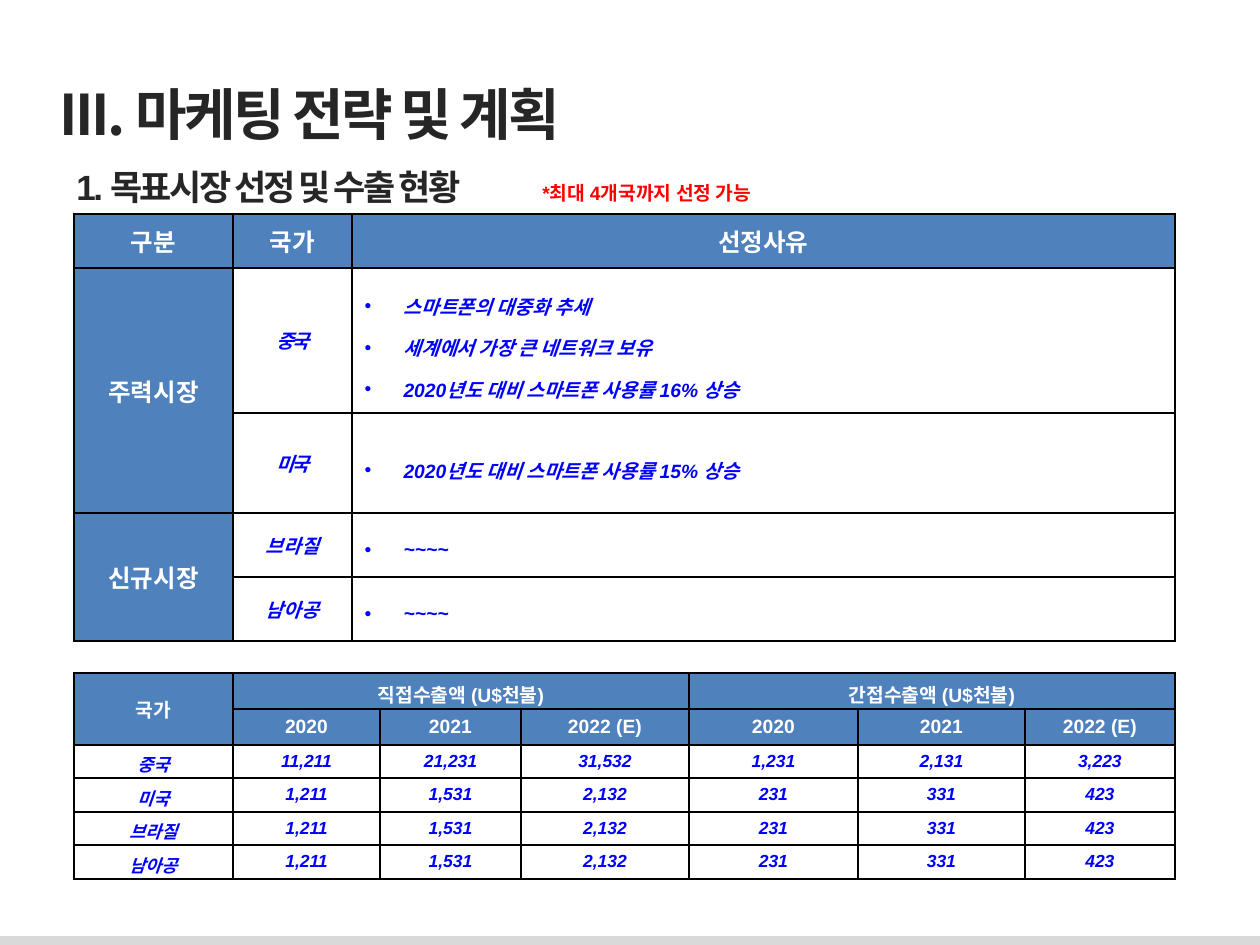
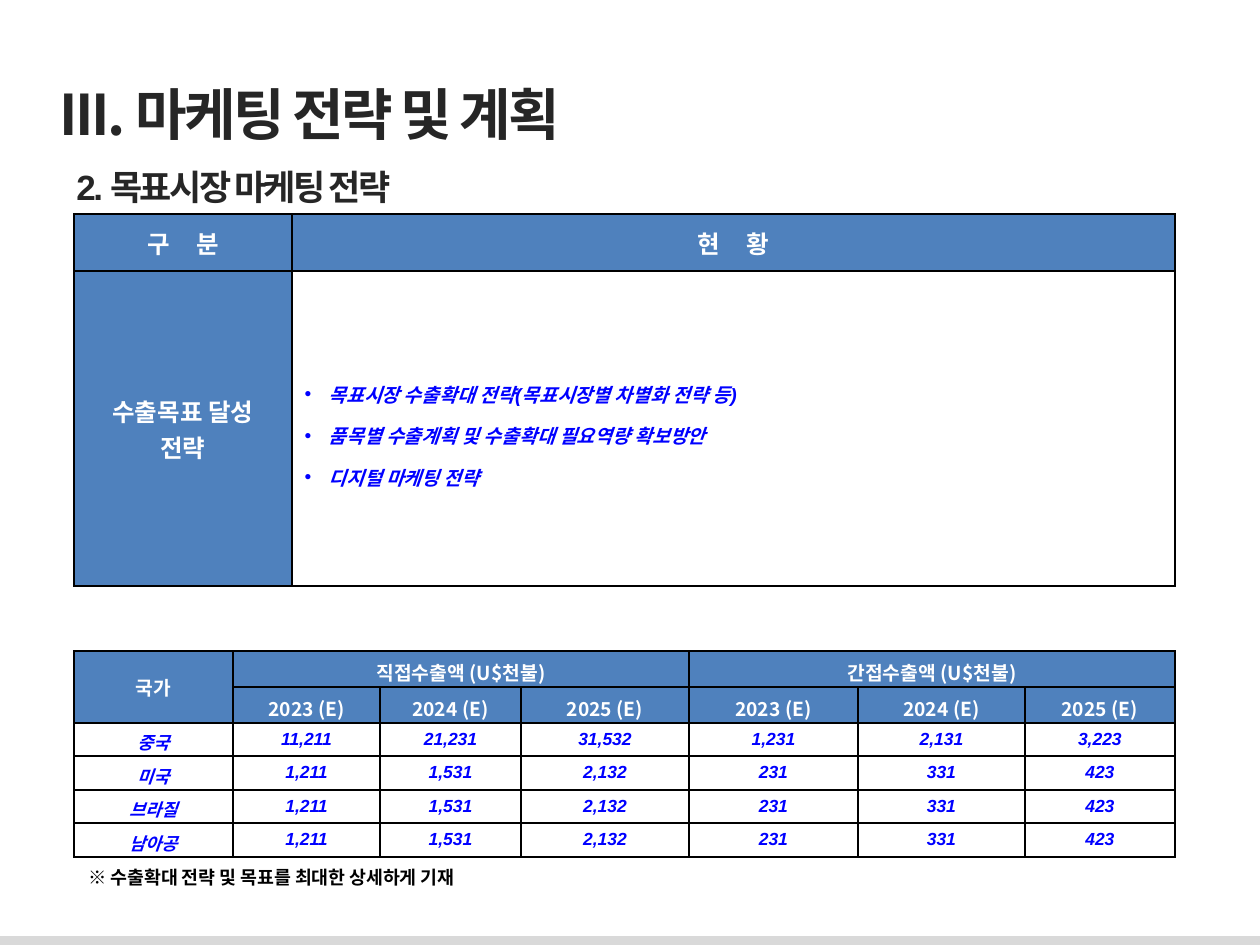
from dataclasses import dataclass, replace

import pptx
import pptx.dml.color
import pptx.enum.shapes
import pptx.enum.text
import pptx.oxml
import pptx.oxml.ns
import pptx.util
from lxml import etree

EMU_PER_PX = 914400 / 126
SLIDE_W, SLIDE_H = 1260, 945
TABLE_X = 74
ARIAL, NOTO = "Arial", "Noto Sans CJK KR"
WHITE, BLACK, DARK = "FFFFFF", "000000", "262626"
BLUE, RED, HEADER_FILL, BAND = "0000FF", "FF0000", "4F81BD", "D9D9D9"
CENTER = pptx.enum.text.PP_ALIGN.CENTER
LEFT = pptx.enum.text.PP_ALIGN.LEFT
MIDDLE = pptx.enum.text.MSO_ANCHOR.MIDDLE
qn = pptx.oxml.ns.qn


@dataclass(frozen=True)
class Style:
    size: float
    color: str
    latin: str = ARIAL
    bold: bool = True
    italic: bool = False
    spacing: float = 0


@dataclass(frozen=True)
class Box:
    x: int
    y: int
    w: int
    h: int


@dataclass(frozen=True)
class Cell:
    text: str
    style: Style
    fill: str | None = None
    rows: int = 1
    cols: int = 1
    indent: int = 0
    bottom: int = 6


TITLE = Style(32, DARK, NOTO, spacing=-1.5)
SUBTITLE = Style(20, DARK, spacing=-1.5)
WARNING = Style(11, RED)
FOOTNOTE = Style(10.5, BLACK, NOTO)
HEADER = Style(14, WHITE)
WIDE_HEADER = replace(HEADER, spacing=6)
SMALL_HEADER = Style(11, WHITE)
ENTRY = Style(11, BLUE, italic=True)
TIGHT_ENTRY = replace(ENTRY, spacing=-1.5)
FIGURE = Style(10, BLUE, italic=True)

TITLE_BOX = Box(47, 73, 582, 81)
SUBTITLE_BOX = Box(64, 159, 635, 55)
WARNING_BOX = Box(530, 174, 535, 37)
FOOTNOTE_BOX = Box(76, 852, 1099, 40)
EXPORT_COLS = [159, 147, 141, 168, 169, 167, 150]
EXPORT_ROWS = [36, 36, 33, 34, 33, 34]
EXPORT_FIGURES = {
    "중국": ["11,211", "21,231", "31,532", "1,231", "2,131", "3,223"],
    **{country: ["1,211", "1,531", "2,132", "231", "331", "423"]
       for country in ("미국", "브라질", "남아공")},
}


def px(n: float) -> pptx.util.Emu:
    return pptx.util.Emu(round(n * EMU_PER_PX))


def rgb(color: str) -> pptx.dml.color.RGBColor:
    return pptx.dml.color.RGBColor.from_string(color)


def place(sp, box: Box) -> None:
    sp.left, sp.top, sp.width, sp.height = map(px, (box.x, box.y, box.w, box.h))


def style_run(r, style: Style) -> None:
    r.font.size = pptx.util.Pt(style.size)
    r.font.bold, r.font.italic = style.bold, style.italic
    r.font.color.rgb = rgb(style.color)
    r.font.name = style.latin
    rpr = r._r.get_or_add_rPr()
    etree.SubElement(rpr, qn("a:ea")).set("typeface", NOTO)
    if style.spacing:
        rpr.set("spc", str(round(style.spacing * 100)))


def write(tf, text: str, style: Style, align=LEFT) -> None:
    tf.text = text
    for p in tf.paragraphs:
        p.alignment = align
        for r in p.runs:
            style_run(r, style)


def add_bullets(tf, indent: int) -> None:
    for p in tf.paragraphs:
        ppr = p._p.get_or_add_pPr()
        ppr.set("marL", str(px(indent)))
        ppr.set("indent", str(-px(indent)))
        etree.SubElement(ppr, qn("a:buFont")).set("typeface", ARIAL)
        etree.SubElement(ppr, qn("a:buChar")).set("char", "•")
        p.line_spacing = 1.5


def add_text(s, box: Box, text: str, style: Style):
    sp = s.shapes.add_textbox(0, 0, 0, 0)
    place(sp, box)
    tf = sp.text_frame
    tf.word_wrap = True
    tf.vertical_anchor = MIDDLE
    write(tf, text, style)
    return tf


def add_borders(cell) -> None:
    tcpr = cell._tc.get_or_add_tcPr()
    for side in ("lnL", "lnR", "lnT", "lnB"):
        ln = etree.SubElement(tcpr, qn(f"a:{side}"), w=str(pptx.util.Pt(1)))
        fill = etree.SubElement(ln, qn("a:solidFill"))
        etree.SubElement(fill, qn("a:srgbClr")).set("val", BLACK)


def fill_cell(cell, item: Cell) -> None:
    cell.vertical_anchor = MIDDLE
    cell.margin_top, cell.margin_bottom = px(6), px(item.bottom)
    write(cell.text_frame, item.text, item.style, LEFT if item.indent else CENTER)
    if item.indent:
        add_bullets(cell.text_frame, item.indent)
    if item.fill:
        cell.fill.solid()
        cell.fill.fore_color.rgb = rgb(item.fill)


def add_grid(s, y: int, cols: list[int], rows: list[int],
             grid: list[list[Cell | None]]) -> None:
    """Draw a bordered table; None marks a cell covered by a merged one."""
    table = s.shapes.add_table(len(rows), len(cols), px(TABLE_X), px(y),
                               px(sum(cols)), px(sum(rows))).table
    table.first_row = table.horz_banding = False
    for col, width in zip(table.columns, cols):
        col.width = px(width)
    for row, height in zip(table.rows, rows):
        row.height = px(height)
    for i, line in enumerate(grid):
        for j, item in enumerate(line):
            cell = table.cell(i, j)
            add_borders(cell)
            cell.fill.background()
            if item is None:
                continue
            if item.rows * item.cols > 1:
                cell.merge(table.cell(i + item.rows - 1, j + item.cols - 1))
            fill_cell(cell, item)


def add_exports(s, y: int, years: list[str], latin: str) -> None:
    style = replace(SMALL_HEADER, latin=latin)
    country_style = replace(FIGURE, latin=latin)

    def head(text: str, rows: int = 1, cols: int = 1, bottom: int = 0) -> Cell:
        return Cell(text, style, HEADER_FILL, rows, cols, bottom=bottom)

    year_bottom = 0 if latin == NOTO else 6
    grid = [
        [head("국가", rows=2, bottom=6), head("직접수출액 (U$천불)", cols=3), None, None,
         head("간접수출액 (U$천불)", cols=3), None, None],
        [None] + [head(year, bottom=year_bottom) for year in years * 2],
    ]
    for country, figures in EXPORT_FIGURES.items():
        grid.append([Cell(country, country_style, bottom=0)]
                    + [Cell(figure, FIGURE) for figure in figures])
    add_grid(s, y, EXPORT_COLS, EXPORT_ROWS, grid)


def add_slide(prs, subtitle: str):
    """Start a slide with the shared footer band, title and subtitle."""
    s = prs.slides.add_slide(prs.slide_layouts[5])
    band = s.shapes.add_shape(pptx.enum.shapes.MSO_SHAPE.RECTANGLE, 0, 0, 0, 0)
    place(band, Box(0, 936, SLIDE_W, 9))
    band.shadow.inherit = False
    band.fill.solid()
    band.fill.fore_color.rgb = rgb(BAND)
    band.line.fill.background()
    title = s.shapes.title
    place(title, TITLE_BOX)
    tf = title.text_frame
    tf.auto_size = pptx.enum.text.MSO_AUTO_SIZE.NONE
    tf.word_wrap = False
    tf.vertical_anchor = MIDDLE
    write(tf, "III. 마케팅 전략 및 계획", TITLE)
    add_text(s, SUBTITLE_BOX, subtitle, SUBTITLE)
    return s


def build_market_slide(prs) -> None:
    s = add_slide(prs, "1. 목표시장 선정 및 수출 현황")

    def reasons(text: str) -> Cell:
        return Cell(text, ENTRY, indent=39)

    china = ("스마트폰의 대중화 추세\n세계에서 가장 큰 네트워크 보유\n"
             "2020년도 대비 스마트폰 사용률 16% 상승")
    add_grid(s, 214, [159, 119, 823], [54, 145, 100, 64, 64], [
        [Cell(text, HEADER, HEADER_FILL) for text in ("구분", "국가", "선정사유")],
        [Cell("주력시장", HEADER, HEADER_FILL, rows=2), Cell("중국", TIGHT_ENTRY),
         reasons(china)],
        [None, Cell("미국", TIGHT_ENTRY), reasons("2020년도 대비 스마트폰 사용률 15% 상승")],
        [Cell("신규시장", HEADER, HEADER_FILL, rows=2), Cell("브라질", ENTRY),
         reasons("~~~~")],
        [None, Cell("남아공", ENTRY), reasons("~~~~")],
    ])
    add_exports(s, 673, ["2020", "2021", "2022 (E)"], ARIAL)
    add_text(s, WARNING_BOX, "*최대 4개국까지 선정 가능", WARNING)


def build_strategy_slide(prs) -> None:
    s = add_slide(prs, "2. 목표시장 마케팅 전략")
    plans = ("목표시장 수출확대 전략(목표시장별 차별화 전략 등)\n"
             "품목별 수출계획 및 수출확대 필요역량 확보방안\n디지털 마케팅 전략")
    add_grid(s, 214, [218, 883], [57, 315], [
        [Cell(text, WIDE_HEADER, HEADER_FILL) for text in ("구 분", "현 황")],
        [Cell("수출목표 달성\n전략", HEADER, HEADER_FILL), Cell(plans, ENTRY, indent=24)],
    ])
    add_exports(s, 651, ["2023 (E)", "2024 (E)", "2025 (E)"], NOTO)
    tf = add_text(s, FOOTNOTE_BOX, "※ ", replace(FOOTNOTE, bold=False))
    p = tf.paragraphs[0]
    p.line_spacing = 1.5
    r = p.add_run()
    r.text = "수출확대 전략 및 목표를 최대한 상세하게 기재"
    style_run(r, FOOTNOTE)


def main() -> None:
    prs = pptx.Presentation()
    prs.slide_width, prs.slide_height = px(SLIDE_W), px(SLIDE_H)
    build_market_slide(prs)
    build_strategy_slide(prs)
    prs.save("out.pptx")


if __name__ == "__main__":
    main()
